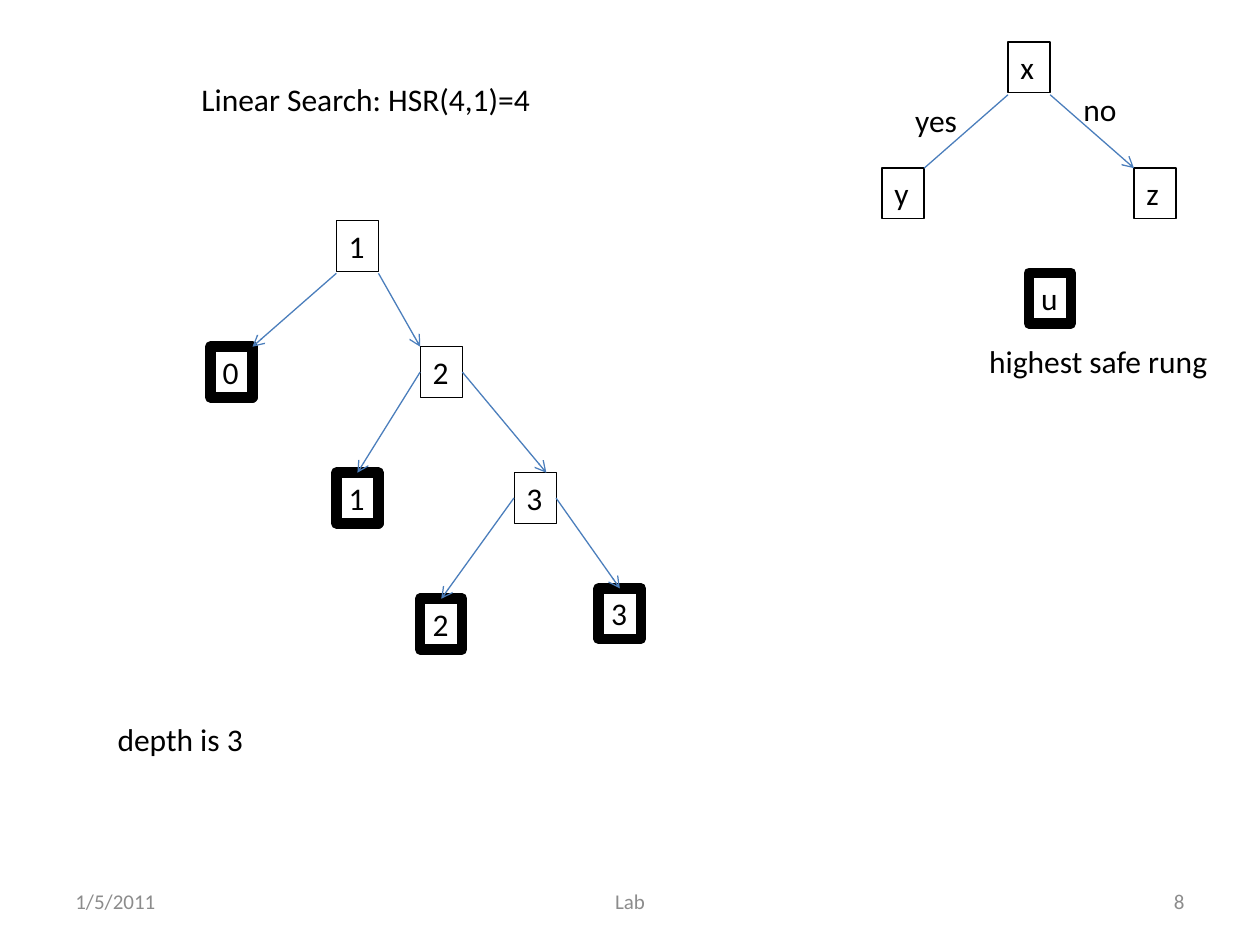
from dataclasses import dataclass

from lxml import etree
from pptx import Presentation
from pptx.dml.color import RGBColor
from pptx.enum.shapes import MSO_CONNECTOR, MSO_SHAPE
from pptx.enum.text import MSO_ANCHOR, MSO_AUTO_SIZE, PP_ALIGN
from pptx.oxml.ns import qn
from pptx.util import Cm, Pt

RECTANGLE = MSO_SHAPE.RECTANGLE
STRAIGHT = MSO_CONNECTOR.STRAIGHT
TOP, MIDDLE = MSO_ANCHOR.TOP, MSO_ANCHOR.MIDDLE
FIT_TEXT, NO_FIT = MSO_AUTO_SIZE.SHAPE_TO_FIT_TEXT, MSO_AUTO_SIZE.NONE
LEFT, CENTER, RIGHT = PP_ALIGN.LEFT, PP_ALIGN.CENTER, PP_ALIGN.RIGHT


@dataclass(frozen=True)
class Theme:
    font: str = "Calibri"
    ink: RGBColor = RGBColor(0x00, 0x00, 0x00)
    muted: RGBColor = RGBColor(0x8C, 0x8C, 0x8C)
    edge: RGBColor = RGBColor(0x4B, 0x7E, 0xBC)
    body_size: float = 18
    footer_size: float = 12
    hairline: float = 0.25
    thin: float = 0.75
    thick: float = 6


THEME = Theme()
BOX_WIDTH, BOX_HEIGHT = 0.85, 1.02

NODES = {
    "root": ("1", 6.78, 4.45, THEME.thin),
    "second": ("2", 8.47, 6.99, THEME.hairline),
    "third": ("3", 10.36, 9.53, THEME.hairline),
    "leaf 0": ("0", 4.24, 6.99, THEME.thick),
    "leaf 1": ("1", 6.78, 9.53, THEME.thick),
    "leaf 2": ("2", 8.47, 12.07, THEME.thick),
    "leaf 3": ("3", 12.07, 11.86, THEME.thick),
    "test": ("x", 20.32, 0.85, THEME.thin),
    "yes branch": ("y", 17.78, 3.39, THEME.thin),
    "no branch": ("z", 22.86, 3.39, THEME.thin),
    "result": ("u", 20.74, 5.5, THEME.thick),
}

TOP_LEFT, TOP_MIDDLE, TOP_RIGHT = (0, 0), (0.5, 0), (1, 0)
TOP_OFFSET = (0.77, 0)
SIDE_LEFT, SIDE_RIGHT = (0, 0.5), (1, 0.5)
BOTTOM_LEFT, BOTTOM_RIGHT = (0, 1.04), (1, 1.04)

EDGES = [
    ("root", BOTTOM_LEFT, "leaf 0", TOP_RIGHT, True),
    ("root", BOTTOM_RIGHT, "second", TOP_LEFT, True),
    ("second", SIDE_LEFT, "leaf 1", TOP_MIDDLE, True),
    ("second", SIDE_RIGHT, "third", TOP_OFFSET, True),
    ("third", SIDE_LEFT, "leaf 2", TOP_MIDDLE, True),
    ("third", SIDE_RIGHT, "leaf 3", TOP_MIDDLE, True),
    ("test", BOTTOM_LEFT, "yes branch", TOP_RIGHT, False),
    ("test", BOTTOM_RIGHT, "no branch", TOP_LEFT, True),
]

LABELS = [
    ("Linear Search: HSR(4,1)=4", 3.81, 1.48, 7.21),
    ("yes", 18.2, 1.91, 1.5),
    ("no", 21.59, 1.69, 1.22),
    ("highest safe rung", 19.69, 6.77, 5.44),
    ("depth is 3", 2.12, 14.39, 3.07),
]

FOOTERS = [
    ("1/5/2011", 1.27, 5.93, LEFT),
    ("Lab", 8.68, 8.04, CENTER),
    ("8", 18.2, 5.93, RIGHT),
]
FOOTER_TOP = 17.66


def set_text(shape, text, size, color, alignment=LEFT, anchor=TOP, wrap=False):
    text_frame = shape.text_frame
    text_frame.text = text
    text_frame.word_wrap = wrap
    text_frame.auto_size = NO_FIT if wrap else FIT_TEXT
    text_frame.vertical_anchor = anchor
    paragraph = text_frame.paragraphs[0]
    paragraph.alignment = alignment
    font = paragraph.runs[0].font
    font.name = THEME.font
    font.size = Pt(size)
    font.color.rgb = color


def add_node(slide, text, left, top, weight):
    shape = slide.shapes.add_shape(
        RECTANGLE, Cm(left), Cm(top), Cm(BOX_WIDTH), Cm(BOX_HEIGHT))
    shape.shadow.inherit = False
    shape.fill.background()
    shape.line.color.rgb = THEME.ink
    shape.line.width = Pt(weight)
    set_text(shape, text, THEME.body_size, THEME.ink)


def anchor_point(name, anchor):
    left, top = NODES[name][1:3]
    across, down = anchor
    return Cm(left + across * BOX_WIDTH), Cm(top + down * BOX_HEIGHT)


def add_edge(slide, parent, start, child, end, has_arrow):
    connector = slide.shapes.add_connector(
        STRAIGHT, *anchor_point(parent, start), *anchor_point(child, end))
    connector.line.color.rgb = THEME.edge
    connector.line.width = Pt(THEME.thin)
    if has_arrow:
        line = connector.line._get_or_add_ln()
        etree.SubElement(line, qn("a:tailEnd"), type="arrow")
    etree.SubElement(connector._element.spPr, qn("a:effectLst"))


def add_label(slide, text, left, top, width):
    shape = slide.shapes.add_textbox(
        Cm(left), Cm(top), Cm(width), Cm(BOX_HEIGHT))
    set_text(shape, text, THEME.body_size, THEME.ink)


def add_footer(slide, text, left, width, alignment):
    shape = slide.shapes.add_textbox(
        Cm(left), Cm(FOOTER_TOP), Cm(width), Cm(BOX_HEIGHT))
    set_text(shape, text, THEME.footer_size, THEME.muted,
             alignment, MIDDLE, wrap=True)


def main():
    presentation = Presentation()
    presentation.slide_width = Cm(25.4)
    presentation.slide_height = Cm(19.05)
    slide = presentation.slides.add_slide(presentation.slide_layouts[6])
    for node in NODES.values():
        add_node(slide, *node)
    for edge in EDGES:
        add_edge(slide, *edge)
    for label in LABELS:
        add_label(slide, *label)
    for footer in FOOTERS:
        add_footer(slide, *footer)
    presentation.save("out.pptx")


if __name__ == "__main__":
    main()
